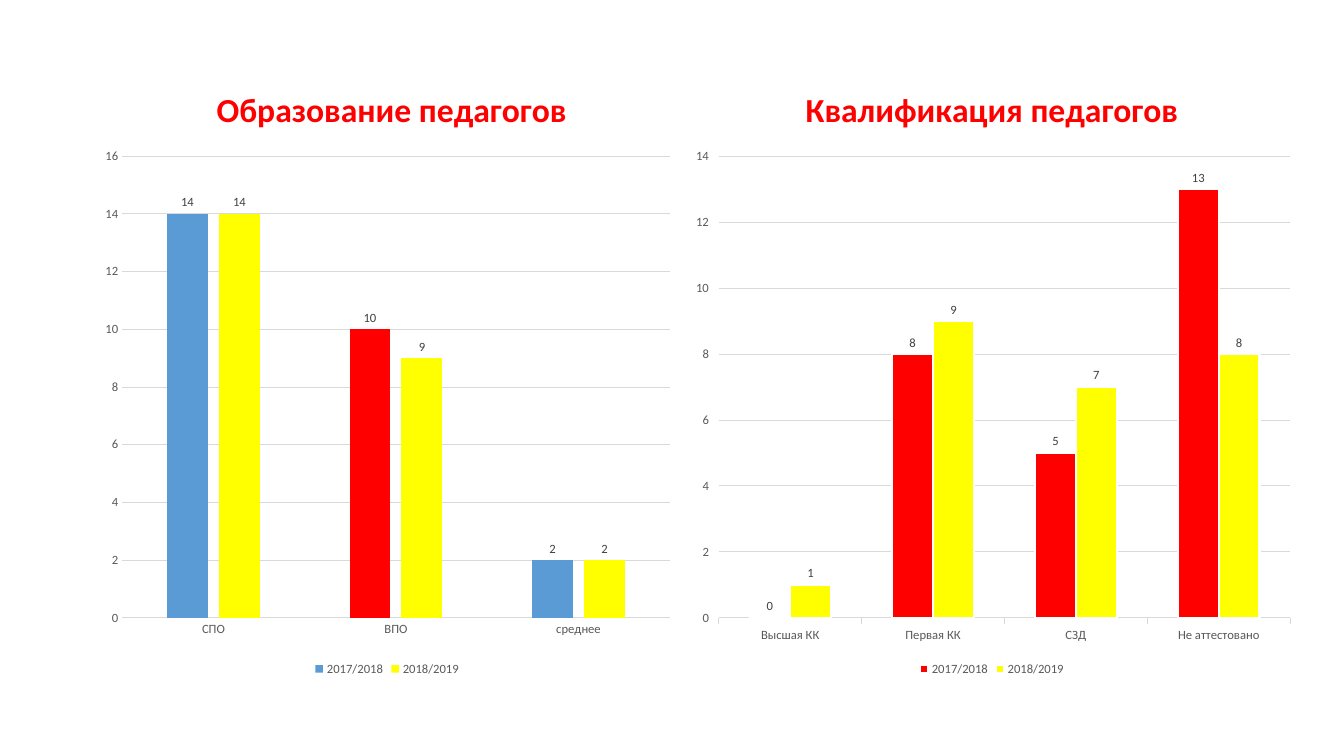
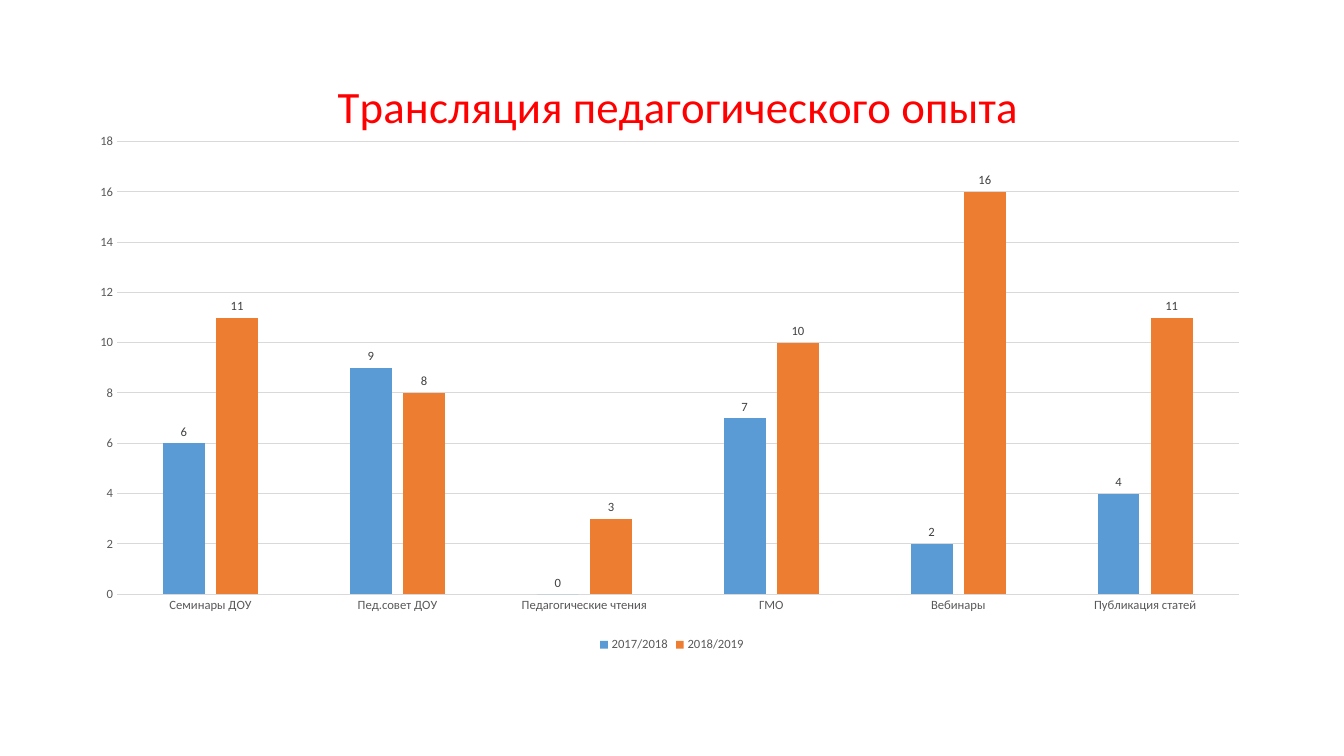
from dataclasses import dataclass

from lxml import etree
from pptx import Presentation
from pptx import util as u
from pptx.chart import data as chart_data
from pptx.dml.color import RGBColor
from pptx.enum import chart as ce
from pptx.oxml import ns


@dataclass(frozen=True)
class Theme:
    font: str = "Calibri"
    black: str = "000000"
    white: str = "FFFFFF"
    red: str = "FF0000"
    blue: str = "5B9BD5"
    yellow: str = "FFFF00"
    orange: str = "ED7D31"
    grid: str = "D9D9D9"
    axis_text: str = "595959"
    label_text: str = "404040"
    base_size: float = 10
    small_size: float = 9
    title_size: float = 24
    large_title_size: float = 32
    hairline: float = 0.75
    bar_outline: float = 1.5


THEME = Theme()
YEARS = ("2017/2018", "2018/2019")


@dataclass(frozen=True)
class ColumnStyle:
    gap: int
    overlap: int
    tick: ce.XL_TICK_MARK
    outlined: bool


SPACED = ColumnStyle(219, -27, ce.XL_TICK_MARK.NONE, False)
OUTLINED = ColumnStyle(150, 0, ce.XL_TICK_MARK.OUTSIDE, True)


def set_font(font, size, color, bold=False):
    font.name = THEME.font
    font.size = u.Pt(size)
    font.bold = bold
    font.color.rgb = RGBColor.from_string(color)


def set_line(line, color, width):
    line.color.rgb = RGBColor.from_string(color)
    line.width = u.Pt(width)


def set_fill(target, color):
    target.format.fill.solid()
    target.format.fill.fore_color.rgb = RGBColor.from_string(color)


def set_layout(parent, index, inner=False, **fractions):
    for old in parent.findall(ns.qn("c:layout")):
        parent.remove(old)
    layout = etree.Element(ns.qn("c:layout"))
    manual = etree.SubElement(layout, ns.qn("c:manualLayout"))
    settings = {"layoutTarget": "inner"} if inner else {}
    settings.update(xMode="edge", yMode="edge", **fractions)
    for name, value in settings.items():
        etree.SubElement(manual, ns.qn(f"c:{name}")).set("val", str(value))
    parent.insert(index, layout)


def style_title(chart, title, size, bold, position):
    chart.has_title = True
    paragraph = chart.chart_title.text_frame.paragraphs[0]
    paragraph.text = title
    set_font(paragraph.font, size, THEME.red, bold)
    set_layout(chart.chart_title.element, 1, x=position[0], y=position[1])


def style_axes(chart, maximum, tick):
    for axis in (chart.category_axis, chart.value_axis):
        axis.major_tick_mark = tick
        axis.minor_tick_mark = ce.XL_TICK_MARK.NONE
        set_font(axis.tick_labels.font, THEME.small_size, THEME.axis_text)
    set_line(chart.category_axis.format.line, THEME.grid, THEME.hairline)
    value_axis = chart.value_axis
    value_axis.minimum_scale = 0
    value_axis.maximum_scale = maximum
    value_axis.major_unit = 2
    value_axis.format.line.fill.background()
    set_line(value_axis.major_gridlines.format.line, THEME.grid, THEME.hairline)


def style_series(series, color, outlined):
    set_fill(series, color)
    if outlined:
        set_line(series.format.line, THEME.white, THEME.bar_outline)
    labels = series.data_labels
    labels.show_value = True
    labels.position = ce.XL_LABEL_POSITION.OUTSIDE_END
    set_font(labels.font, THEME.small_size, THEME.label_text)


def style_legend(chart):
    chart.has_legend = True
    chart.legend.position = ce.XL_LEGEND_POSITION.BOTTOM
    chart.legend.include_in_layout = False
    set_font(chart.legend.font, THEME.small_size, THEME.axis_text)


def add_year_chart(slide, box, title, title_at, plot_box, categories, values,
                   colors, maximum, style, title_size=THEME.title_size, bold=True):
    data = chart_data.CategoryChartData()
    data.categories = categories
    for year, counts in zip(YEARS, values):
        data.add_series(year, counts)
    frame = slide.shapes.add_chart(
        ce.XL_CHART_TYPE.COLUMN_CLUSTERED, *(u.Inches(n) for n in box), data)
    chart = frame.chart
    set_font(chart.font, THEME.base_size, THEME.black)
    style_title(chart, title, title_size, bold, title_at)
    style_axes(chart, maximum, style.tick)
    style_legend(chart)
    plot = chart.plots[0]
    plot.vary_by_categories = False
    plot.gap_width = style.gap
    plot.overlap = style.overlap
    for series, color in zip(plot.series, colors):
        style_series(series, color, style.outlined)
    plot_area = chart.element.find(".//" + ns.qn("c:plotArea"))
    set_layout(plot_area, 0, inner=True, **dict(zip("xywh", plot_box)))
    return chart


def build_staff_slide(slide):
    education = add_year_chart(
        slide, (0.92, 0.56, 5.84, 6.19), "Образование педагогов",
        (0.2, 0.04), (0.05, 0.16, 0.93, 0.74),
        ("СПО", "ВПО", "среднее"), ((14, 10, 2), (14, 9, 2)),
        (THEME.blue, THEME.yellow), 16, SPACED)
    set_fill(education.plots[0].series[0].points[1], THEME.red)
    add_year_chart(
        slide, (6.76, 0.56, 6.16, 6.19), "Квалификация педагогов",
        (0.19, 0.04), (0.06, 0.16, 0.92, 0.74),
        ("Высшая КК", "Первая КК", "СЗД", "Не аттестовано"),
        ((0, 8, 5, 13), (1, 9, 7, 8)),
        (THEME.red, THEME.yellow), 14, OUTLINED)


def build_experience_slide(slide):
    add_year_chart(
        slide, (0.81, 0.36, 11.71, 6.15), "Трансляция педагогического опыта",
        (0.21, 0.05), (0.03, 0.17, 0.95, 0.73),
        ("Семинары ДОУ", "Пед.совет ДОУ", "Педагогические чтения",
         "ГМО", "Вебинары", "Публикация статей"),
        ((6, 9, 0, 7, 2, 4), (11, 8, 3, 10, 16, 11)),
        (THEME.blue, THEME.orange), 18, SPACED,
        title_size=THEME.large_title_size, bold=False)


def main():
    presentation = Presentation()
    presentation.slide_width = u.Inches(13.33)
    presentation.slide_height = u.Inches(7.5)
    for build in (build_staff_slide, build_experience_slide):
        build(presentation.slides.add_slide(presentation.slide_layouts[6]))
    presentation.save("out.pptx")


if __name__ == "__main__":
    main()
